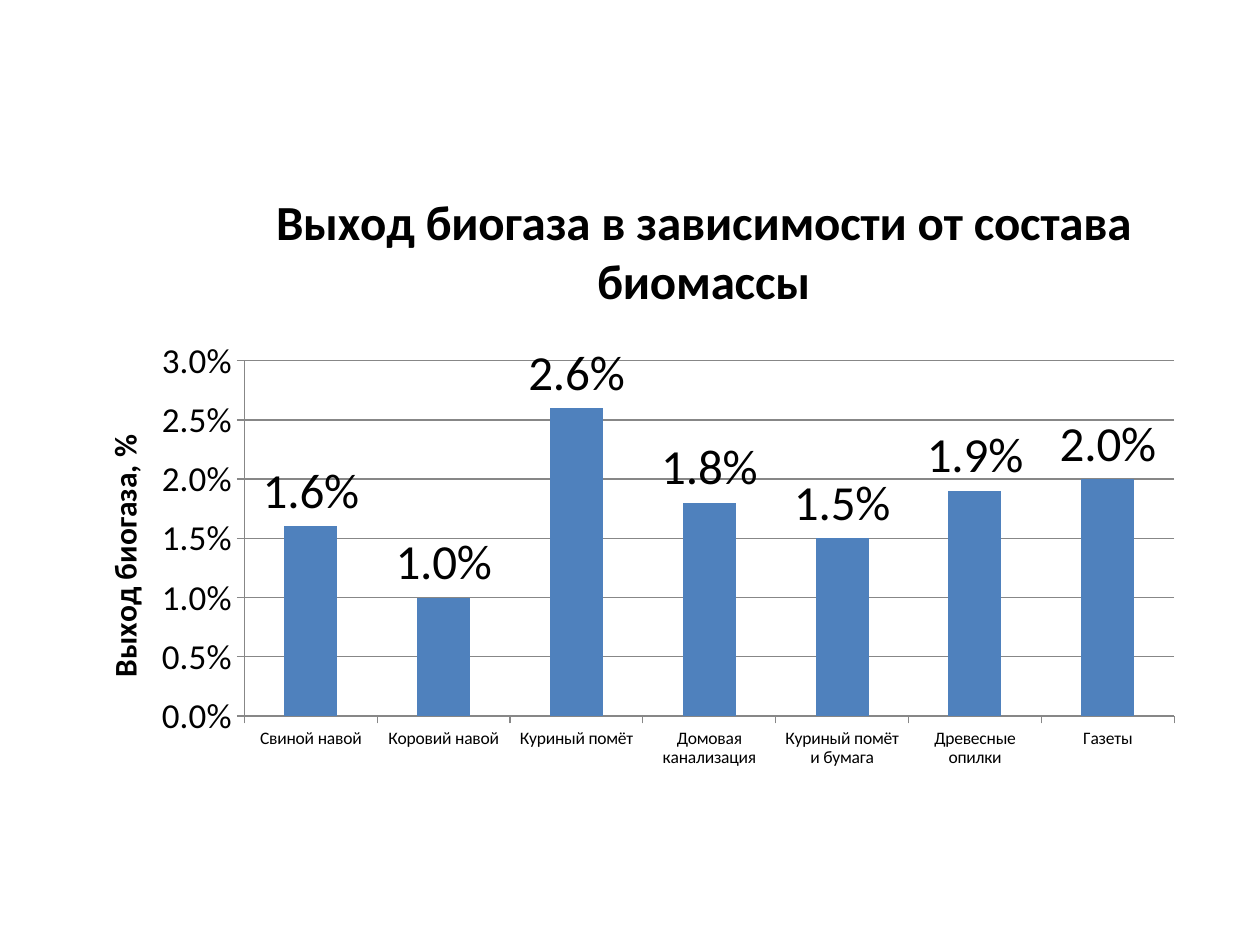
import lxml.etree
import pptx
import pptx.chart.data
import pptx.dml.color
import pptx.enum.chart
import pptx.oxml.ns
import pptx.util

BLACK = pptx.dml.color.RGBColor(0x00, 0x00, 0x00)
GRAY = pptx.dml.color.RGBColor(0x87, 0x87, 0x87)
BLUE = pptx.dml.color.RGBColor(0x4F, 0x81, 0xBD)
FONT_NAME = "Calibri"
PERCENT_FORMAT = "0.0%"
YIELDS = {
    "Свиной навой": 0.016,
    "Коровий навой": 0.01,
    "Куриный помёт": 0.026,
    "Домовая канализация": 0.018,
    "Куриный помёт и бумага": 0.015,
    "Древесные опилки": 0.019,
    "Газеты": 0.02,
}


def format_font(font, size, bold=False):
    """Give a chart font its name, size, weight and colour."""
    font.name = FONT_NAME
    font.size = pptx.util.Pt(size)
    font.bold = bold
    font.color.rgb = BLACK


def set_layout(element, index, **fractions):
    """Place a chart part at fractions of the chart area."""
    qualify = pptx.oxml.ns.qn
    for layout in element.findall(qualify("c:layout")):
        element.remove(layout)
    layout = lxml.etree.Element(qualify("c:layout"))
    manual = lxml.etree.SubElement(layout, qualify("c:manualLayout"))
    if "w" in fractions:
        lxml.etree.SubElement(manual, qualify("c:layoutTarget")).set("val", "inner")
    for name in ("xMode", "yMode"):
        lxml.etree.SubElement(manual, qualify(f"c:{name}")).set("val", "edge")
    for name, fraction in fractions.items():
        lxml.etree.SubElement(manual, qualify(f"c:{name}")).set("val", str(fraction))
    element.insert(index, layout)


def set_title(title, text, size, x, y):
    """Write a bold chart or axis title at the given place."""
    title.text_frame.text = text
    format_font(title.text_frame.paragraphs[0].runs[0].font, size, bold=True)
    set_layout(title._element, 1, x=x, y=y)


def format_axis(axis, size):
    """Style the line, ticks and labels of an axis."""
    axis.format.line.color.rgb = GRAY
    axis.major_tick_mark = pptx.enum.chart.XL_TICK_MARK.OUTSIDE
    axis.minor_tick_mark = pptx.enum.chart.XL_TICK_MARK.NONE
    format_font(axis.tick_labels.font, size)


def add_yield_chart(slide, left, top, width, height):
    """Add the biogas yield column chart in the given box."""
    data = pptx.chart.data.CategoryChartData(number_format=PERCENT_FORMAT)
    data.categories = list(YIELDS)
    data.add_series("Выход биогаза", list(YIELDS.values()))
    chart = slide.shapes.add_chart(
        pptx.enum.chart.XL_CHART_TYPE.COLUMN_CLUSTERED, left, top, width, height, data
    ).chart
    format_font(chart.font, 10)
    chart.has_legend = False
    chart.has_title = True
    set_title(chart.chart_title, "Выход биогаза в зависимости от состава биомассы",
              28, 0.18, 0.03)

    format_axis(chart.category_axis, 10)
    value_axis = chart.value_axis
    format_axis(value_axis, 20)
    value_axis.minimum_scale = 0
    value_axis.maximum_scale = 0.03
    value_axis.major_unit = 0.005
    value_axis.major_gridlines.format.line.color.rgb = GRAY
    value_axis.tick_labels.number_format = PERCENT_FORMAT
    value_axis.tick_labels.number_format_is_linked = False
    set_title(value_axis.axis_title, "Выход биогаза, %", 18, 0.03, 0.43)
    body = value_axis.axis_title.text_frame._txBody.bodyPr
    body.set("rot", "-5400000")
    body.set("vert", "horz")

    plot = chart.plots[0]
    plot.gap_width = 150
    plot.vary_by_categories = False
    fill = plot.series[0].format.fill
    fill.solid()
    fill.fore_color.rgb = BLUE
    plot.has_data_labels = True
    labels = plot.data_labels
    labels.show_value = True
    labels.position = pptx.enum.chart.XL_LABEL_POSITION.OUTSIDE_END
    labels.number_format = PERCENT_FORMAT
    labels.number_format_is_linked = False
    format_font(labels.font, 28)
    plot_area = chart._chartSpace.chart.plotArea
    set_layout(plot_area, 0, x=0.16, y=0.32, w=0.82, h=0.57)


def main():
    """Build and save the presentation."""
    presentation = pptx.Presentation()
    presentation.slide_width = pptx.util.Cm(25.4)
    presentation.slide_height = pptx.util.Cm(19.05)
    slide = presentation.slides.add_slide(presentation.slide_layouts[6])
    add_yield_chart(slide, pptx.util.Cm(1.27), pptx.util.Cm(3.25),
                    pptx.util.Cm(22.86), pptx.util.Cm(12.57))
    presentation.save("out.pptx")


if __name__ == "__main__":
    main()
